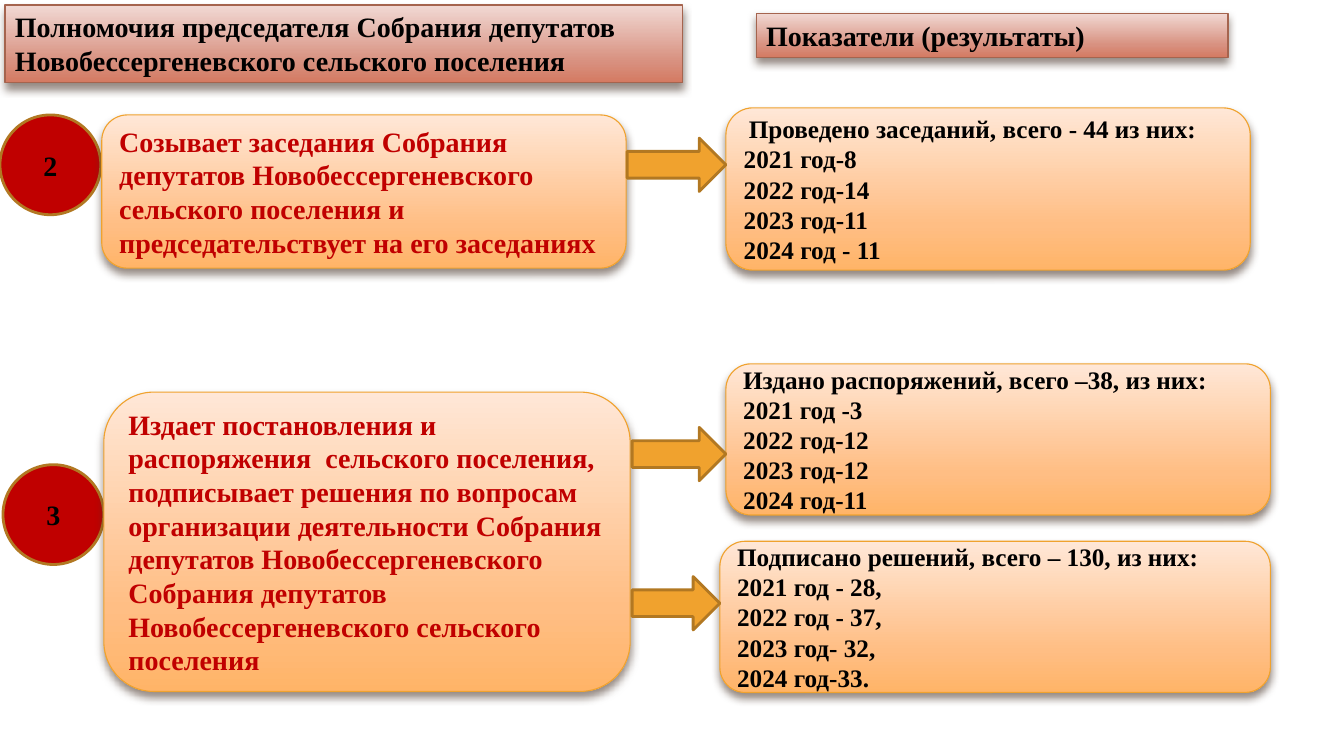
from copy import deepcopy

from pptx import Presentation
from pptx.dml.color import RGBColor
from pptx.enum.shapes import MSO_SHAPE as SHAPE
from pptx.enum.text import MSO_ANCHOR as ANCHOR, PP_ALIGN as ALIGN
from pptx.oxml import parse_xml
from pptx.oxml.ns import nsdecls, qn
from pptx.util import Emu, Pt

PX = 9144  # 100 px to the inch
FONT = "Times New Roman"
BLACK, RED = "000000", "C00000"
ORANGE, BROWN, RUST = "F0A22E", "B27822", "A5644E"
PEACH_STOPS = [(0, "FFE7D7"), (72, "FFBE84"), (100, "FFB468")]
RUST_STOPS = [(0, "F1D9D4"), (72, "D89180"), (100, "D47A62")]
SHADOW = parse_xml(
    f'<a:outerShdw {nsdecls("a")} blurRad="76200" dist="50800" dir="5400000" rotWithShape="0">'
    '<a:srgbClr val="4E3B30"><a:alpha val="60000"/></a:srgbClr></a:outerShdw>')


def add_box(kind, place, fill, line, width):
    """Add a shape; a list of stops as fill gives a vertical gradient with a shadow."""
    box = page.shapes.add_shape(kind, *[Emu(length * PX) for length in place])
    box.shadow.inherit = False
    box.line.color.rgb = RGBColor.from_string(line)
    box.line.width = Pt(width)
    if isinstance(fill, str):
        box.fill.solid()
        box.fill.fore_color.rgb = RGBColor.from_string(fill)
        return box
    box.fill.gradient()
    box.fill.gradient_angle = 270
    properties = box._element.spPr
    stops = properties.find(qn("a:gradFill")).find(qn("a:gsLst"))
    for stop in list(stops):
        stops.remove(stop)
    for percent, color in fill:
        stops.append(parse_xml(
            f'<a:gs {nsdecls("a")} pos="{percent * 1000}"><a:srgbClr val="{color}"/></a:gs>'))
    properties.find(qn("a:effectLst")).append(deepcopy(SHADOW))
    return box


def write(box, lines, size, color, align=ALIGN.LEFT, anchor=ANCHOR.MIDDLE):
    frame = box.text_frame
    frame.word_wrap = True
    frame.vertical_anchor = anchor
    for number, line in enumerate(lines):
        para = frame.paragraphs[0] if number == 0 else frame.add_paragraph()
        para.alignment = align
        span = para.add_run()
        span.text = line
        span.font.name = FONT
        span.font.size = Pt(size)
        span.font.bold = True
        span.font.color.rgb = RGBColor.from_string(color)


deck = Presentation()
deck.slide_width, deck.slide_height = Emu(1333 * PX), Emu(750 * PX)
page = deck.slides.add_slide(deck.slide_layouts[6])

headings = [
    ((5, 5, 672, 77), "Полномочия председателя Собрания депутатов Новобессергеневского сельского поселения"),
    ((750, 13, 468, 44), "Показатели (результаты)"),
]
for place, text in headings:
    heading = add_box(SHAPE.RECTANGLE, place, RUST_STOPS, RUST, 0.79)
    write(heading, [text], 20, BLACK, anchor=ANCHOR.TOP)

for place, number in [((0, 114, 100, 99), "2"), ((3, 461, 100, 99), "3")]:
    badge = add_box(SHAPE.OVAL, place, RED, BROWN, 2)
    write(badge, [number], 20, BLACK, ALIGN.CENTER)

powers = [
    ((101, 114, 520, 152),
     "Созывает заседания Собрания депутатов Новобессергеневского сельского поселения "
     "и председательствует на его заседаниях"),
    ((103, 389, 522, 297),
     "Издает постановления и распоряжения  сельского поселения, подписывает решения "
     "по вопросам организации деятельности Собрания депутатов Новобессергеневского "
     "Собрания депутатов Новобессергеневского сельского поселения"),
]
for place, text in powers:
    power = add_box(SHAPE.ROUNDED_RECTANGLE, place, PEACH_STOPS, ORANGE, 0.79)
    write(power, [text], 20, RED)

results = [
    ((720, 107, 520, 161), ALIGN.LEFT,
     ["Проведено заседаний, всего - 44 из них:",
      "2021 год-8", "2022 год-14", "2023 год-11", "2024 год - 11"]),
    ((720, 361, 540, 150), ALIGN.JUSTIFY,
     ["Издано распоряжений, всего –38, из них:",
      "2021 год -3", "2022 год-12", "2023 год-12", "2024 год-11"]),
    ((714, 537, 546, 150), ALIGN.JUSTIFY,
     ["Подписано решений, всего – 130, из них:",
      "2021 год - 28,", "2022 год - 37,", "2023 год- 32,", "2024 год-33."]),
]
result_boxes = []
for place, align, lines in results:
    result = add_box(SHAPE.ROUNDED_RECTANGLE, place, PEACH_STOPS, ORANGE, 0.79)
    write(result, lines, 18, BLACK, align)
    result_boxes.append(result)
meetings_title = result_boxes[0].text_frame.paragraphs[0]
meetings_title._p.get_or_add_pPr().set("indent", str(5 * PX))

for left, top, width in [(622, 137, 98), (627, 424, 93), (627, 572, 87)]:
    add_box(SHAPE.RIGHT_ARROW, (left, top, width, 53), ORANGE, BROWN, 2)

deck.save("out.pptx")
